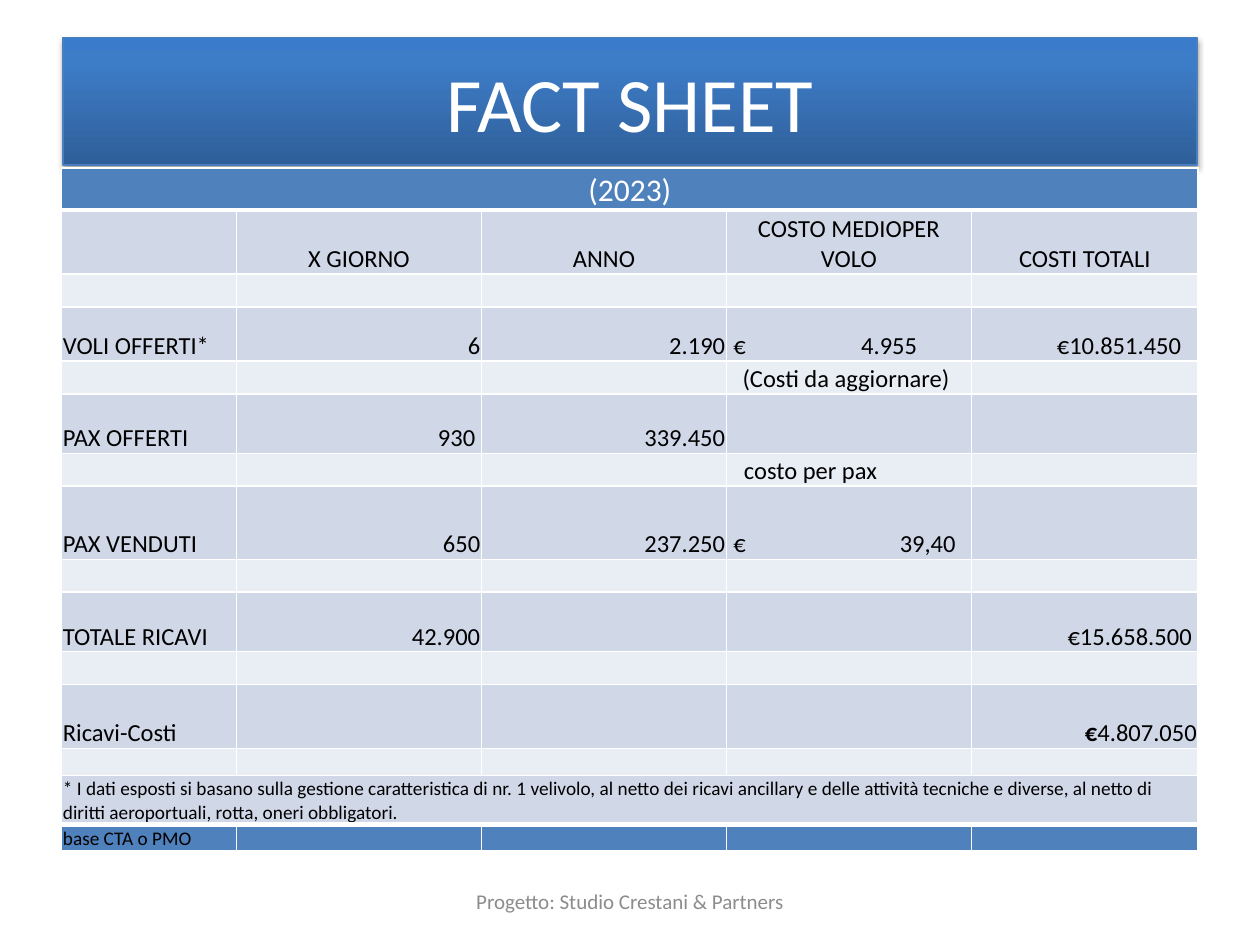
from lxml.etree import SubElement
from pptx import Presentation
from pptx.dml.color import RGBColor
from pptx.enum.text import MSO_ANCHOR as Anchor, PP_ALIGN as Align
from pptx.oxml import parse_xml
from pptx.oxml.ns import nsdecls, qn
from pptx.util import Pt

COLORS = {"white": "FFFFFF", "black": "000000", "gray": "8C8C8C", "blue": "4F81BD",
          "dark band": "D0D8E8", "light band": "E9EDF4", "title line": "4B7EBC"}
TITLE_STOPS = [(0, "2F5F99"), (80, "3D7CC7"), (100, "3A7CCB")]
FONT = "Calibri"
TITLE = "FACT SHEET"
FOOTER = "Progetto: Studio Crestani & Partners"
NOTE = ("* I dati esposti si basano sulla gestione caratteristica di nr. 1 velivolo, "
        "al netto dei ricavi ancillary e delle attività tecniche e diverse, al netto di "
        "diritti aeroportuali, rotta, oneri obbligatori.")
L, C, R = Align.LEFT, Align.CENTER, Align.RIGHT
COLUMNS = [100, 140, 140, 140, 129.6]

# Row: height, font size, cells by column. Cell: text, alignment, options.
ROWS = [
    (24, 18, {0: ("(2023)", C, {})}),
    (36.7, 14, {1: ("X GIORNO", C, {}), 2: ("ANNO", C, {}),
                3: ("COSTO MEDIOPER VOLO", C, {}), 4: ("COSTI TOTALI", C, {})}),
    (18.7, 14, {}),
    (31, 14, {0: ("VOLI OFFERTI*", L, {}), 1: ("6", R, {}), 2: ("2.190", R, {}),
              3: ("€\t4.955", L, {"left": 4, "tab": 105}),
              4: ("€10.851.450", R, {"right": 9.7})}),
    (18.7, 14, {3: ("(Costi da aggiornare)", C, {"right": 4})}),
    (34, 14, {0: ("PAX OFFERTI", L, {}), 1: ("930", R, {"right": 3.6}),
              2: ("339.450", R, {})}),
    (18.7, 14, {3: ("costo per pax", L, {"left": 10})}),
    (42, 14, {0: ("PAX VENDUTI", L, {}), 1: ("650", R, {}), 2: ("237.250", R, {}),
              3: ("€\t39,40", L, {"left": 4, "tab": 127})}),
    (18.7, 14, {}),
    (34, 14, {0: ("TOTALE RICAVI", L, {}), 1: ("42.900", R, {}),
              4: ("€15.658.500", R, {"right": 3.6})}),
    (18.7, 14, {}),
    (36.7, 14, {0: ("Ricavi-Costi", L, {}), 4: ("€4.807.050", R, {"bold_start": 1})}),
    (15.4, 11, {}),
    (27.4, 11, {0: (NOTE, L, {})}),
    (15.4, 11, {0: ("base CTA o PMO", L, {})}),
]
LAST = len(ROWS) - 1
MERGED_ROWS = (0, LAST - 1)
THICK_EDGES = (1, LAST)  # horizontal rules, numbered by the row below them


def rgb(name):
    return RGBColor.from_string(COLORS[name])


def style_run(span, size, color, bold=False):
    font = span.font
    font.name, font.size, font.bold = FONT, Pt(size), bold
    font.color.rgb = rgb(color)


def add_borders(cell, row):
    properties = cell._tc.get_or_add_tcPr()
    widths = {"lnL": 1, "lnR": 1, "lnT": 3 if row in THICK_EDGES else 1,
              "lnB": 3 if row + 1 in THICK_EDGES else 1}
    for index, (edge, width) in enumerate(widths.items()):
        properties.insert(index, parse_xml(
            f'<a:{edge} {nsdecls("a")} w="{Pt(width)}"><a:solidFill>'
            f'<a:srgbClr val="{COLORS["white"]}"/></a:solidFill></a:{edge}>'))


def fill_cell(cell, size, color, text, align, left=0.75, right=0.75, tab=None, bold_start=0):
    """Write a cell; tab is a right tab stop, bold_start counts leading bold letters."""
    cell.vertical_anchor = Anchor.BOTTOM
    cell.margin_left, cell.margin_right = Pt(left), Pt(right)
    cell.margin_top, cell.margin_bottom = Pt(0.75), 0
    para = cell.text_frame.paragraphs[0]
    para.alignment = align
    if not text:
        para._p.get_or_add_endParaRPr().set("sz", str(size * 100))
    for part, bold in ((text[:bold_start], True), (text[bold_start:], False)):
        if part:
            span = para.add_run()
            span.text = part
            style_run(span, size, color, bold)
    if tab:
        stops = SubElement(para._p.get_or_add_pPr(), qn("a:tabLst"))
        SubElement(stops, qn("a:tab"), pos=str(Pt(tab)), algn="r")


def add_title(slide):
    box = slide.shapes.title
    box.left, box.top, box.width, box.height = Pt(36), Pt(21.6), Pt(648), Pt(72.7)
    box.text_frame.text = TITLE
    box.text_frame.vertical_anchor = Anchor.MIDDLE
    para = box.text_frame.paragraphs[0]
    para.alignment = C
    style_run(para.runs[0], 44, "white")
    stops = "".join(f'<a:gs pos="{position * 1000}"><a:srgbClr val="{color}"/></a:gs>'
                    for position, color in TITLE_STOPS)
    properties = box._element.spPr
    properties.append(parse_xml(
        f'<a:gradFill {nsdecls("a")} rotWithShape="1"><a:gsLst>{stops}</a:gsLst>'
        '<a:lin ang="16200000" scaled="0"/></a:gradFill>'))
    box.line.color.rgb = rgb("title line")
    box.line.width = Pt(0.75)
    properties.append(parse_xml(
        f'<a:effectLst {nsdecls("a")}><a:outerShdw blurRad="{Pt(3.1)}" dist="{Pt(1.8)}" '
        f'dir="5400000" rotWithShape="0"><a:srgbClr val="{COLORS["black"]}">'
        '<a:alpha val="35000"/></a:srgbClr></a:outerShdw></a:effectLst>'))


def add_fact_table(slide):
    height = sum(row[0] for row in ROWS)
    table = slide.shapes.add_table(len(ROWS), len(COLUMNS), Pt(35.2), Pt(96),
                                   Pt(sum(COLUMNS)), Pt(height)).table
    table.first_row = table.horz_banding = False
    for column, width in zip(table.columns, COLUMNS):
        column.width = Pt(width)
    for index, (height, size, cells) in enumerate(ROWS):
        table.rows[index].height = Pt(height)
        band = "blue" if index in (0, LAST) else "dark band" if index % 2 else "light band"
        for column in range(len(COLUMNS)):
            cell = table.cell(index, column)
            text, align, options = cells.get(column, ("", L, {}))
            fill_cell(cell, size, "black" if index else "white", text, align, **options)
            cell.fill.solid()
            cell.fill.fore_color.rgb = rgb(band)
            add_borders(cell, index)
        if index in MERGED_ROWS:
            table.cell(index, 0).merge(table.cell(index, len(COLUMNS) - 1))


def add_footer(slide):
    box = slide.shapes.add_textbox(Pt(246), Pt(500.5), Pt(228), Pt(28.8))
    frame = box.text_frame
    frame.word_wrap = True
    frame.vertical_anchor = Anchor.MIDDLE
    frame.text = FOOTER
    frame.paragraphs[0].alignment = C
    style_run(frame.paragraphs[0].runs[0], 12, "gray")


def main():
    deck = Presentation()
    deck.slide_width, deck.slide_height = Pt(720), Pt(540)
    slide = deck.slides.add_slide(deck.slide_layouts[5])
    add_title(slide)
    add_fact_table(slide)
    add_footer(slide)
    deck.save("out.pptx")


if __name__ == "__main__":
    main()
